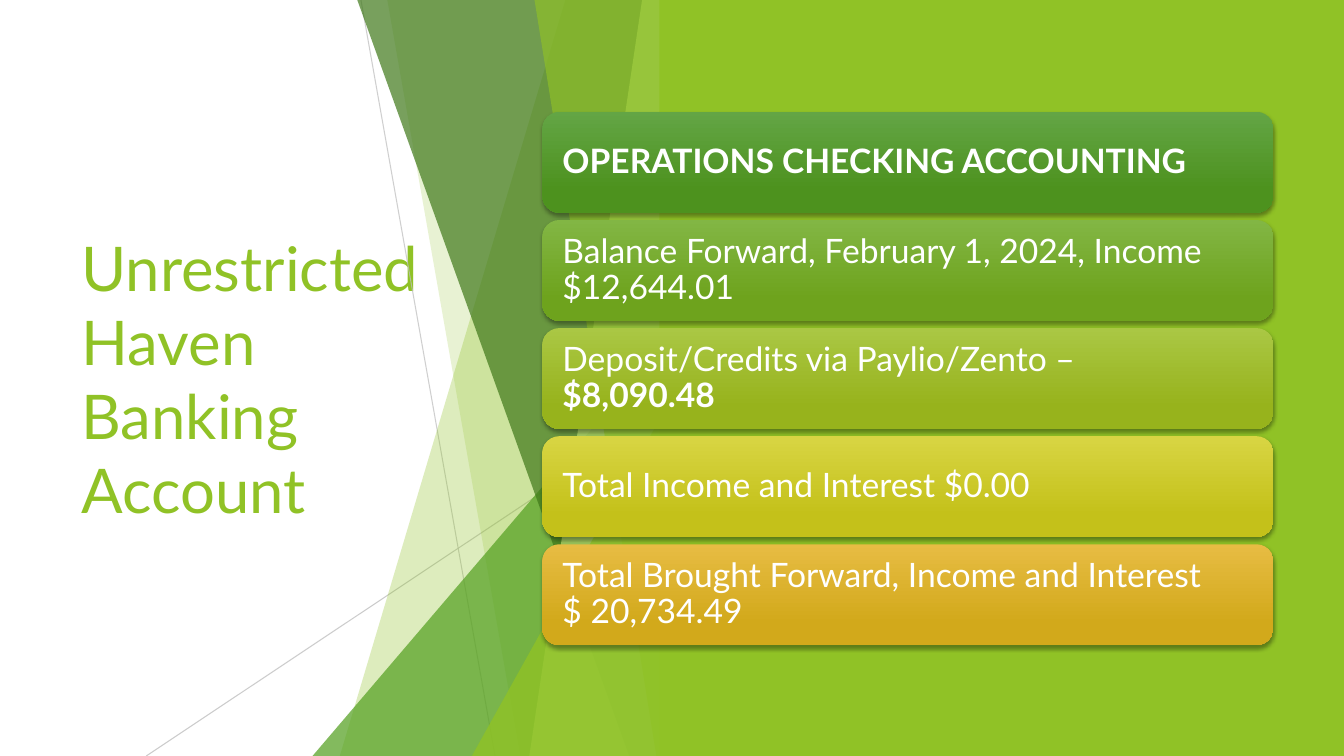
from dataclasses import dataclass

from lxml import etree
from pptx import Presentation
from pptx.dml.color import RGBColor
from pptx.enum.shapes import MSO_CONNECTOR, MSO_SHAPE
from pptx.enum.text import MSO_ANCHOR, PP_ALIGN
from pptx.oxml import parse_xml
from pptx.oxml.ns import nsdecls, qn
from pptx.util import Inches, Pt


@dataclass(frozen=True)
class Theme:
    font: str = "Lato"
    lime: str = "90C226"
    pale_lime: str = "C0E474"
    green: str = "54A021"
    dark_green: str = "3F7819"
    gray: str = "BFBFBF"
    white: str = "FFFFFF"
    title_size: int = 44
    card_size: int = 24


THEME = Theme()
SLIDE_W, SLIDE_H = 13.33, 7.5
TOP = -0.01

# Facets in drawing order: corner points, colour, opacity in percent
FACETS = [
    ([(5.61, TOP), (6.66, TOP), (6.66, SLIDE_H), (3.37, SLIDE_H)], THEME.lime, 30),
    ([(3.84, TOP), (6.67, TOP), (6.67, SLIDE_H), (5.16, SLIDE_H)], THEME.lime, 20),
    ([(6.66, 3.33), (6.66, SLIDE_H), (3.1, SLIDE_H)], THEME.green, 72),
    ([(3.54, TOP), (6.66, TOP), (6.66, SLIDE_H), (6.24, SLIDE_H)], THEME.dark_green, 70),
    ([(6.37, TOP), (6.66, TOP), (6.66, SLIDE_H), (5.25, SLIDE_H)], THEME.pale_lime, 70),
    ([(5.3, TOP), (6.66, TOP), (6.66, SLIDE_H), (6.51, SLIDE_H)], THEME.lime, 65),
    ([(6.67, 3.93), (6.67, SLIDE_H), (4.68, SLIDE_H)], THEME.lime, 80),
]
# Hairlines: from, to, opacity in percent
HAIRLINES = [((3.58, 0), (4.91, SLIDE_H), 75), ((6.66, 4.03), (1.45, SLIDE_H), 80)]

# Cards: gradient top and bottom colours, then lines of (text, bold)
CARDS = [
    ("63A545", "4D921E", [("OPERATIONS CHECKING ACCOUNTING", True)]),
    ("82B644", "6EA31D", [("Balance Forward, February 1, 2024, Income", False),
                          ("$12,644.01", False)]),
    ("AAC744", "97B31C", [("Deposit/Credits via Paylio/Zento –", False),
                          ("$8,090.48", True)]),
    ("D8D543", "C4C11A", [("Total Income and Interest $0.00", False)]),
    ("E7BC43", "D2A91B", [("Total Brought Forward, Income and Interest", False),
                          ("$ 20,734.49", False)]),
]
CARD_LEFT, CARD_TOP, CARD_W, CARD_H = 5.38, 1.11, 7.25, 1
CARD_STEP = (5.4 - CARD_TOP) / (len(CARDS) - 1)


def paint(fill, color, opacity=100):
    """Give a fill one solid colour with an opacity in percent."""
    fill.solid()
    fill.fore_color.rgb = RGBColor.from_string(color)
    if opacity < 100:
        solid = fill.fore_color._xFill
        etree.SubElement(solid[0], qn("a:alpha"), val=str(opacity * 1000))


def add_text(paragraph, text, size, color, bold=False):
    run = paragraph.add_run()
    run.text = text
    run.font.name = THEME.font
    run.font.size = Pt(size)
    run.font.bold = bold
    run.font.color.rgb = RGBColor.from_string(color)


deck = Presentation()
deck.slide_width, deck.slide_height = Inches(SLIDE_W), Inches(SLIDE_H)
slide = deck.slides.add_slide(deck.slide_layouts[6])
shapes = slide.shapes
paint(slide.background.fill, THEME.white)

title = shapes.add_textbox(Inches(0.71), Inches(1.51), Inches(3.88), Inches(4.48)).text_frame
title.word_wrap = True
title.vertical_anchor = MSO_ANCHOR.MIDDLE
add_text(title.paragraphs[0], "Unrestricted Haven Banking Account", THEME.title_size, THEME.lime)

for start, end, opacity in HAIRLINES:
    hairline = shapes.add_connector(
        MSO_CONNECTOR.STRAIGHT, *(Inches(value) for value in start + end))
    hairline.line.width = Pt(0.75)
    paint(hairline.line.fill, THEME.gray, opacity)
    etree.SubElement(hairline._element.spPr, qn("a:effectLst"))

for corners, color, opacity in FACETS:
    points = [(Inches(x), Inches(y)) for x, y in corners]
    outline = shapes.build_freeform(*points[0])
    outline.add_line_segments(points[1:], close=True)
    facet = outline.convert_to_shape()
    facet.shadow.inherit = False
    facet.line.fill.background()
    paint(facet.fill, color, opacity)

panel = shapes.add_shape(
    MSO_SHAPE.RECTANGLE, Inches(6.54), 0, Inches(SLIDE_W - 6.54), Inches(SLIDE_H))
panel.shadow.inherit = False
panel.line.fill.background()
paint(panel.fill, THEME.lime)

for row, (light, deep, lines) in enumerate(CARDS):
    card = shapes.add_shape(
        MSO_SHAPE.ROUNDED_RECTANGLE, Inches(CARD_LEFT), Inches(CARD_TOP + row * CARD_STEP),
        Inches(CARD_W), Inches(CARD_H))
    card.line.fill.background()
    card.fill.gradient()
    card.fill.gradient_angle = 270
    for stop, position, color in zip(card.fill.gradient_stops, (0, 0.78), (light, deep)):
        stop.position = position
        stop.color.rgb = RGBColor.from_string(color)

    card.shadow.inherit = False
    card._element.spPr.find(qn("a:effectLst")).append(parse_xml(
        f'<a:outerShdw {nsdecls("a")} blurRad="{Pt(3)}" dist="{Pt(2)}" dir="5400000" '
        'rotWithShape="0"><a:srgbClr val="000000"><a:alpha val="35000"/></a:srgbClr>'
        '</a:outerShdw>'))

    label = card.text_frame
    label.word_wrap = True
    label.vertical_anchor = MSO_ANCHOR.MIDDLE
    label.margin_left = label.margin_right = Inches(0.15)
    label.margin_top = label.margin_bottom = Inches(0.1)
    paragraph = label.paragraphs[0]
    paragraph.alignment = PP_ALIGN.LEFT
    paragraph.line_spacing = 0.9
    for number, (text, bold) in enumerate(lines):
        if number:
            paragraph.add_line_break()
        add_text(paragraph, text, THEME.card_size, THEME.white, bold)

deck.save("out.pptx")
